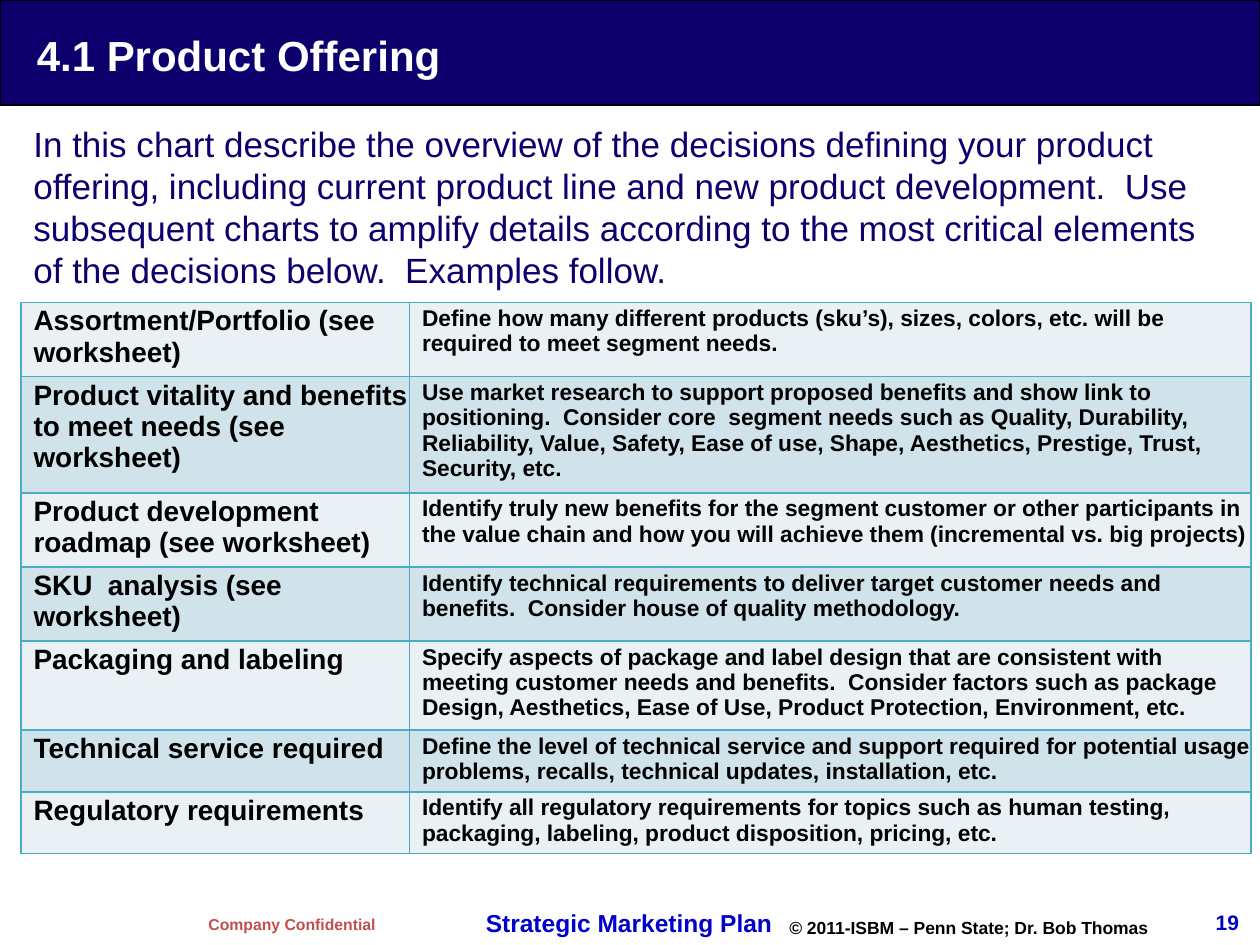
from lxml.etree import SubElement
from pptx import Presentation
from pptx.dml.color import RGBColor
from pptx.enum.shapes import MSO_SHAPE
from pptx.enum.text import MSO_ANCHOR, PP_ALIGN
from pptx.oxml.ns import qn
from pptx.util import Pt

THEME = {
    "font": "Arial",
    "navy": "0D006C", "blue": "0000CC", "red": "C0504D",
    "black": "000000", "white": "FFFFFF",
    "edge": "4BACC6", "bands": ["E9F1F5", "D0E3EA"],
    "title": 24, "body": 20, "topic": 16, "detail": 13,
    "plan": 14, "page": 12, "rights": 10, "secret": 9,
}


def write(frame, text, size, color, bold=True, align=PP_ALIGN.LEFT, **form):
    """Fill a text frame or cell; form holds its wrap, anchor and margins."""
    for name, value in form.items():
        setattr(frame, name, value)
    para = getattr(frame, "text_frame", frame).paragraphs[0]
    para.alignment = align
    run = para.add_run()
    run.text = text
    look = {"name": THEME["font"], "size": Pt(THEME[size]), "bold": bold}
    for name, value in look.items():
        setattr(run.font, name, value)
    run.font.color.rgb = RGBColor.from_string(THEME[color])


def border(cell):
    for side in ("a:lnL", "a:lnR", "a:lnT", "a:lnB"):
        line = SubElement(cell._tc.get_or_add_tcPr(), qn(side), w=str(Pt(1)))
        fill = SubElement(line, qn("a:solidFill"))
        SubElement(fill, qn("a:srgbClr"), val=THEME["edge"])


deck = Presentation()
deck.slide_width, deck.slide_height = Pt(720), Pt(540)
slide = deck.slides.add_slide(deck.slide_layouts[5])
shapes = slide.shapes
title = shapes.title

# Title band, placed behind the title
band = shapes.add_shape(MSO_SHAPE.RECTANGLE, 0, 0, Pt(720), Pt(60))
band.shadow.inherit = False
band.fill.solid()
band.fill.fore_color.rgb = RGBColor.from_string(THEME["navy"])
band.line.color.rgb = RGBColor.from_string(THEME["black"])
band.line.width = Pt(0.75)
title._element.addprevious(band._element)

place = {"left": 12, "top": 2, "width": 696, "height": 58}
for name, value in place.items():
    setattr(title, name, Pt(value))
flush = dict.fromkeys(
    ["margin_left", "margin_top", "margin_right", "margin_bottom"], 0)
write(title.text_frame, "4.1 Product Offering", "title", "white",
      **{**flush, "margin_left": Pt(9)}, word_wrap=True,
      vertical_anchor=MSO_ANCHOR.MIDDLE)

# Introduction and footer
intro = (
    "In this chart describe the overview of the decisions defining your "
    "product offering, including current product line and new product "
    "development.  Use subsequent charts to amplify details according to the "
    "most critical elements of the decisions below.  Examples follow."
)
plain, wrap = {"word_wrap": False}, {"word_wrap": True}
corner = {**flush, **wrap, "align": PP_ALIGN.RIGHT,
          "vertical_anchor": MSO_ANCHOR.BOTTOM}
boxes = [
    ((12, 66.5, 696, 96), intro, "body", "navy", {**wrap, "bold": False}),
    ((112, 519, 110, 18), "Company Confidential", "secret", "red", plain),
    ((270.5, 515.5, 179, 24), "Strategic Marketing Plan", "plan", "blue",
     plain),
    ((444, 520.5, 246, 19), "© 2011-ISBM – Penn State; Dr. Bob Thomas",
     "rights", "black", wrap),
    ((648, 510, 60, 24), "19", "page", "blue", corner),
]
for spot, text, size, color, form in boxes:
    box = shapes.add_textbox(*map(Pt, spot))
    write(box.text_frame, text, size, color, **form)

# Decision table: row height, topic, detail
rows = [
    (40, "Assortment/Portfolio (see worksheet)",
     "Define how many different products (sku’s), sizes, colors, etc. will be "
     "required to meet segment needs."),
    (62, "Product vitality and benefits to meet needs (see worksheet)",
     "Use market research to support proposed benefits and show link to "
     "positioning.  Consider core  segment needs such as Quality, Durability, "
     "Reliability, Value, Safety, Ease of use, Shape, Aesthetics, Prestige, "
     "Trust, Security, etc."),
    (40, "Product development roadmap (see worksheet)",
     "Identify truly new benefits for the segment customer or other "
     "participants in the value chain and how you will achieve them "
     "(incremental vs. big projects)"),
    (40, "SKU  analysis (see worksheet)",
     "Identify technical requirements to deliver target customer needs and "
     "benefits.  Consider house of quality methodology."),
    (48, "Packaging and labeling",
     "Specify aspects of package and label design that are consistent with "
     "meeting customer needs and benefits.  Consider factors such as package "
     "Design, Aesthetics, Ease of Use, Product Protection, Environment, etc."),
    (33.5, "Technical service required",
     "Define the level of technical service and support required for "
     "potential usage problems, recalls, technical updates, installation, "
     "etc."),
    (33.5, "Regulatory requirements",
     "Identify all regulatory requirements for topics such as human testing, "
     "packaging, labeling, product disposition, pricing, etc."),
]
widths = [222, 481]
high = sum(row[0] for row in rows)
table = shapes.add_table(len(rows), len(widths), Pt(12), Pt(172.75),
                         Pt(sum(widths)), Pt(high)).table
table.first_row = table.horz_banding = False
for col, width in zip(table.columns, widths):
    col.width = Pt(width)
inset = {"margin_left": Pt(7.2), "margin_top": Pt(2),
         "margin_right": 0, "margin_bottom": Pt(2)}
for r, (height, *texts) in enumerate(rows):
    table.rows[r].height = Pt(height)
    for c, (text, size) in enumerate(zip(texts, ("topic", "detail"))):
        cell = table.cell(r, c)
        border(cell)
        cell.fill.solid()
        cell.fill.fore_color.rgb = RGBColor.from_string(THEME["bands"][r % 2])
        write(cell, text, size, "black", **inset)

deck.save("out.pptx")
